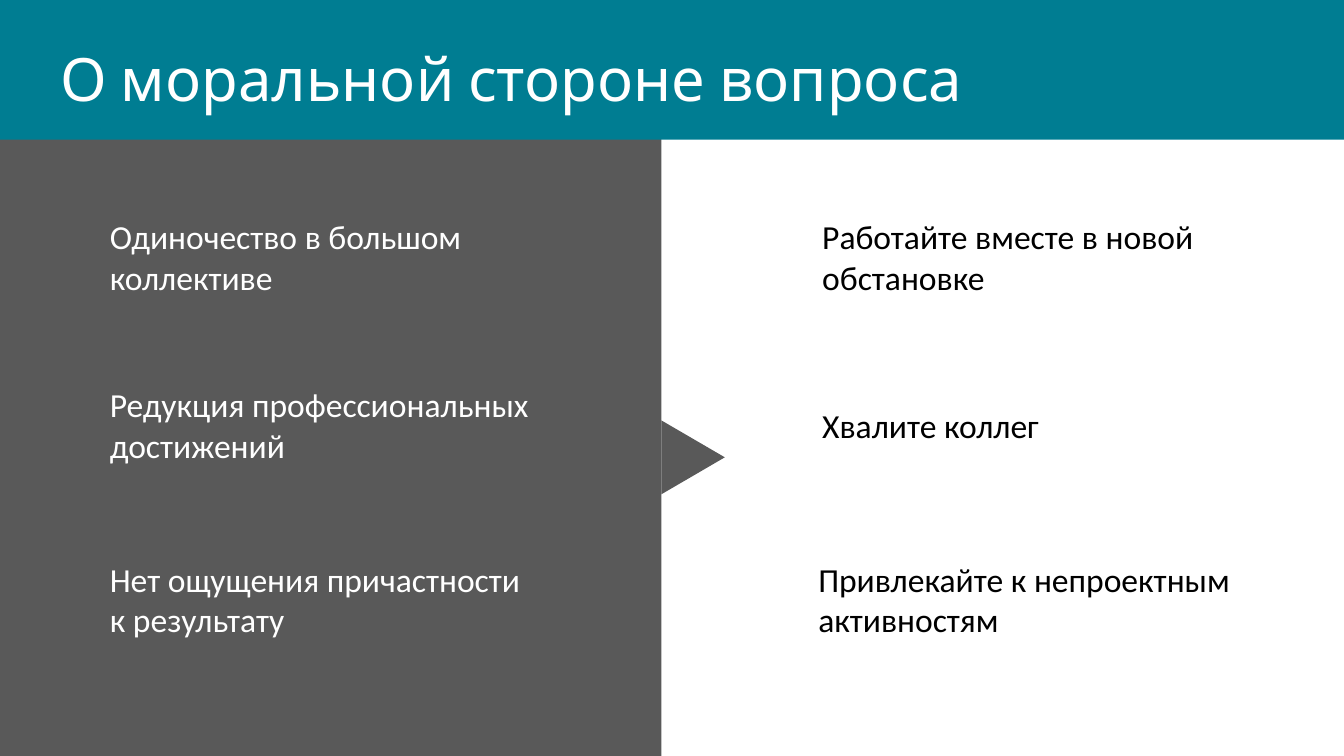
"""Build the slide on the moral side of the question."""
import pptx
import pptx.dml.color
import pptx.enum.shapes
import pptx.enum.text
import pptx.util

Pt = pptx.util.Pt
SHAPES = pptx.enum.shapes.MSO_SHAPE
COLORS = {"teal": "007D92", "gray": "595959", "white": "FFFFFF", "black": "000000"}
TITLE = "О моральной стороне вопроса"
ROWS = [
    (138, "Одиночество в большом коллективе", 433.4, "Работайте вместе в новой обстановке", 51.2),
    (228, "Редукция профессиональных достижений", 433.4, "Хвалите коллег", 29),
    (321.5, "Нет ощущения причастности к результату", 431.3, "Привлекайте к непроектным активностям", 51.2),
]
PROBLEM_LEFT = 51.8
TEXT_WIDTH = 241
TWO_LINES = 51.2


def rgb(name):
    """Return the named palette colour."""
    return pptx.dml.color.RGBColor.from_string(COLORS[name])


def add_block(slide, kind, left, top, width, height, color, rotation=0):
    """Add a flat filled shape without outline."""
    block = slide.shapes.add_shape(kind, Pt(left), Pt(top), Pt(width), Pt(height))
    block.shadow.inherit = False
    block.fill.solid()
    block.fill.fore_color.rgb = rgb(color)
    block.line.fill.background()
    block.rotation = rotation


def write(frame, text, *, size=18, font="Calibri", color="black",
          anchor=pptx.enum.text.MSO_ANCHOR.TOP):
    """Put left-aligned formatted text into a text frame."""
    frame.word_wrap = True
    frame.auto_size = pptx.enum.text.MSO_AUTO_SIZE.NONE
    frame.vertical_anchor = anchor
    paragraph = frame.paragraphs[0]
    paragraph.alignment = pptx.enum.text.PP_ALIGN.LEFT
    run = paragraph.add_run()
    run.text = text
    run.font.size = Pt(size)
    run.font.name = font
    run.font.color.rgb = rgb(color)


def add_statement(slide, text, left, middle, height, color):
    """Add a statement centred vertically on its row."""
    statement = slide.shapes.add_textbox(
        Pt(left), Pt(middle - height / 2), Pt(TEXT_WIDTH), Pt(height))
    write(statement.text_frame, text, color=color)


def set_title(slide):
    """Place the title in front of the banner."""
    title = slide.shapes.title
    title.left, title.top, title.width, title.height = Pt(25.2), Pt(18.7), Pt(561.6), Pt(46)
    write(title.text_frame, TITLE, size=32, font="Cabin", color="white")
    title.element.getparent().append(title.element)


def main():
    """Build and save the presentation."""
    deck = pptx.Presentation()
    deck.slide_width, deck.slide_height = Pt(720), Pt(405)
    slide = deck.slides.add_slide(deck.slide_layouts[5])
    add_block(slide, SHAPES.RECTANGLE, -0.7, 0, 355, 405, "gray")
    add_block(slide, SHAPES.RECTANGLE, 0, -4.3, 725, 79.2, "teal")
    set_title(slide)
    add_block(slide, SHAPES.ISOSCELES_TRIANGLE, 351.5, 228, 39.6, 34, "gray", rotation=90)
    for middle, problem, advice_left, advice, advice_height in ROWS:
        add_statement(slide, problem, PROBLEM_LEFT, middle, TWO_LINES, "white")
        add_statement(slide, advice, advice_left, middle, advice_height, "black")
    deck.save("out.pptx")


if __name__ == "__main__":
    main()
